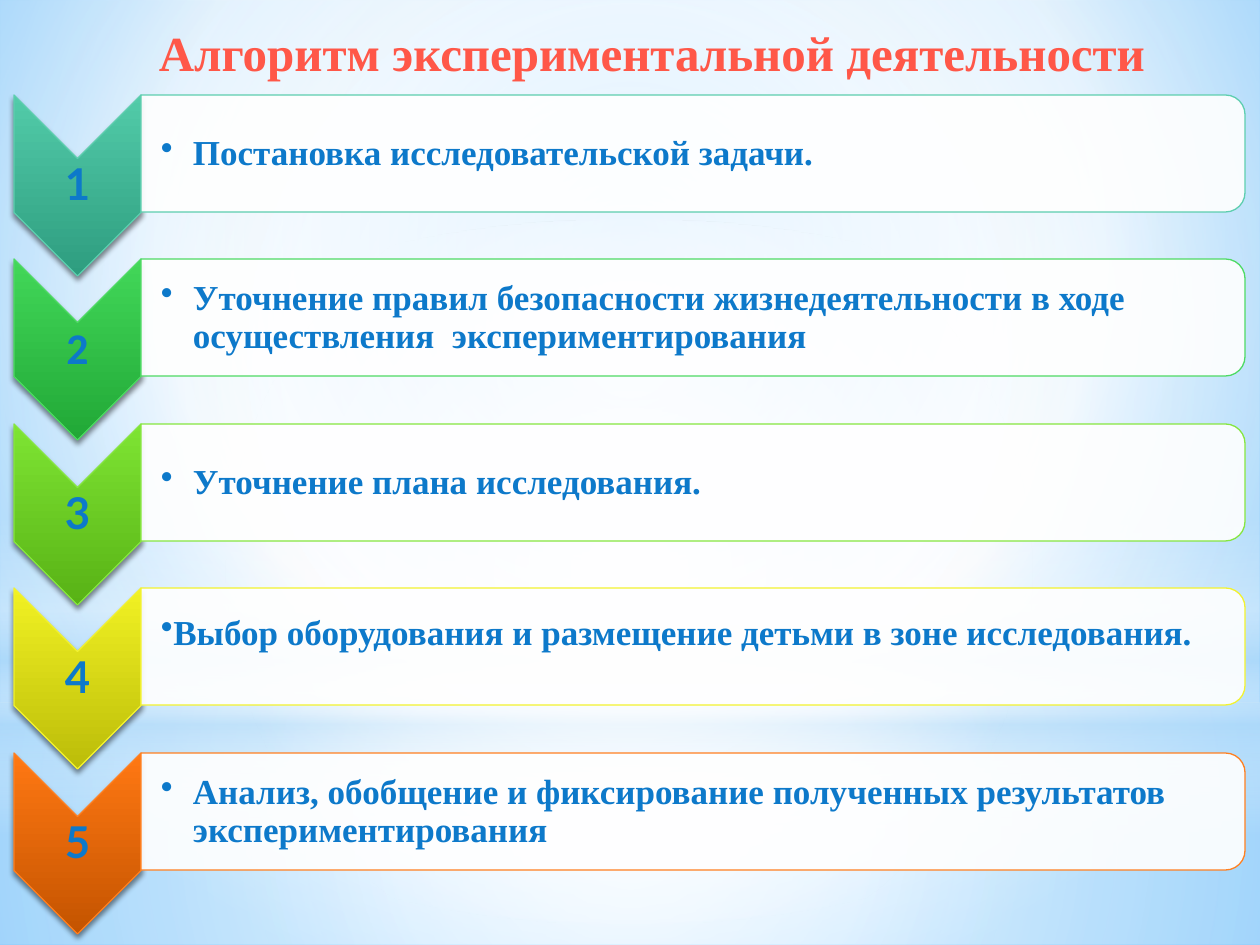
"""Build a slide with the five steps of experimental activity."""
from dataclasses import dataclass
from typing import NamedTuple, Optional

from lxml.etree import SubElement
from pptx import Presentation
from pptx.dml.color import RGBColor
from pptx.enum.shapes import MSO_SHAPE
from pptx.enum.text import MSO_ANCHOR, PP_ALIGN
from pptx.oxml import parse_xml
from pptx.oxml.ns import nsdecls, qn
from pptx.util import Emu, Pt

COLORS = {
    "white": "FFFFFF", "black": "000000", "mist": "B4DCFA",
    "sky": "9ED5FF", "azure": "5BB9FF", "title": "FF5748", "text": "0D79CA",
}
SERIF = "Times New Roman"
ROW_TOP, ROW_PITCH = 95, 164.4


class Box(NamedTuple):
    left: int
    top: int
    width: int
    height: int


class Stop(NamedTuple):
    position: int
    color: str
    opacity: int = 100


@dataclass
class Backdrop:
    kind: MSO_SHAPE
    box: Box
    stops: list[Stop]
    focus: Optional[tuple[int, int, int, int]] = (50, 50, 50, 50)


@dataclass
class Step:
    text: str
    light: str
    dark: str
    line: str
    number_font: str = "Lato"
    indent: int = 32
    spacing: float = 0.9
    bottom_margin: int = 1


WHITE, MIST = COLORS["white"], COLORS["mist"]
BACKDROPS = [
    Backdrop(MSO_SHAPE.RECTANGLE, Box(0, 703, 1260, 242),
             [Stop(0, WHITE, 91), Stop(37, WHITE, 76), Stop(100, MIST, 79)]),
    Backdrop(MSO_SHAPE.RECTANGLE, Box(0, 0, 1260, 703),
             [Stop(0, WHITE, 89), Stop(48, WHITE, 62), Stop(100, MIST, 79)]),
    Backdrop(MSO_SHAPE.RECTANGLE, Box(0, 519, 1260, 315),
             [Stop(0, WHITE, 0), Stop(29, WHITE, 30), Stop(45, MIST, 40),
              Stop(55, WHITE, 26), Stop(65, MIST, 60), Stop(100, WHITE, 0)], None),
    Backdrop(MSO_SHAPE.OVAL, Box(0, 220, 1260, 703), [Stop(0, WHITE), Stop(56, WHITE, 0)]),
]
STEPS = [
    Step("Постановка исследовательской задачи.", "52CBA9", "2E9D7F", "5DCEAF"),
    Step("Уточнение правил безопасности жизнедеятельности в ходе "
         "осуществления  экспериментирования", "42D759", "21A836", "4EDA64", "Calibri"),
    Step("Уточнение плана исследования.", "7EE433", "58B215", "86E640"),
    Step("Выбор оборудования и размещение детьми в зоне исследования.",
         "F1F123", "BCBD09", "F2F230", indent=0, spacing=1.0, bottom_margin=33),
    Step("Анализ, обобщение и фиксирование полученных результатов "
         "экспериментирования", "FF7813", "C45400", "FF8021"),
]


def px(length: float) -> Emu:
    return Emu(round(length * 914400 / 126))


def set_gradient(parent, stops: list[Stop], focus=None) -> None:
    """Replace the solid fill of parent by a gradient, downward unless a focus is given."""
    stop_xml = "".join(
        f'<a:gs pos="{stop.position * 1000}"><a:srgbClr val="{stop.color}">'
        f'<a:alpha val="{stop.opacity * 1000}"/></a:srgbClr></a:gs>' for stop in stops)
    if focus:
        edges = " ".join(f'{side}="{value * 1000}"' for side, value in zip("ltrb", focus))
        direction = f'<a:path path="circle"><a:fillToRect {edges}/></a:path>'
    else:
        direction = '<a:lin ang="5400000" scaled="0"/>'
    gradient = parse_xml(f'<a:gradFill {nsdecls("a")} rotWithShape="0">'
                         f'<a:gsLst>{stop_xml}</a:gsLst>{direction}</a:gradFill>')
    parent.replace(parent.find(qn("a:solidFill")), gradient)


def add_shape(slide, kind: MSO_SHAPE, box: Box, line: Optional[str] = None, turned: bool = False):
    """Add a white shape that covers box, turned a quarter clockwise if asked."""
    left, top, width, height = box
    if turned:
        shift = (width - height) / 2
        left, top, width, height = left + shift, top - shift, height, width
    shape = slide.shapes.add_shape(kind, px(left), px(top), px(width), px(height))
    shape.rotation = 90 if turned else 0
    shape.shadow.inherit = False
    shape.fill.solid()
    shape.fill.fore_color.rgb = RGBColor.from_string(WHITE)
    if line:
        shape.line.color.rgb = RGBColor.from_string(line)
        shape.line.width = Pt(0.75)
    else:
        shape.line.fill.background()
    return shape


def add_text(slide, box: Box, text: str, font: str, size: int, color: str,
             margins: tuple[int, int, int, int], anchor: MSO_ANCHOR = MSO_ANCHOR.MIDDLE):
    """Add a bold one-paragraph text box and return its paragraph."""
    frame = slide.shapes.add_textbox(*map(px, box)).text_frame
    frame.word_wrap = True
    frame.vertical_anchor = anchor
    (frame.margin_left, frame.margin_top,
     frame.margin_right, frame.margin_bottom) = map(px, margins)
    paragraph = frame.paragraphs[0]
    paragraph.text = text
    paragraph.font.name = font
    paragraph.font.size = Pt(size)
    paragraph.font.bold = True
    paragraph.font.color.rgb = RGBColor.from_string(color)
    return paragraph


def set_indent(paragraph, margin: int, first_line: int) -> None:
    properties = paragraph._p.get_or_add_pPr()
    properties.set("marL", str(px(margin)))
    properties.set("indent", str(px(first_line)))


def add_bullet(paragraph) -> None:
    bullet = parse_xml(f'<a:buChar {nsdecls("a")} char="•"/>')
    paragraph._p.get_or_add_pPr().insert_element_before(
        bullet, "a:tabLst", "a:defRPr", "a:extLst")


def add_drop_shadow(shape) -> None:
    effects = shape._element.spPr.find(qn("a:effectLst"))
    shadow = SubElement(effects, qn("a:outerShdw"), blurRad=str(Pt(3.1)),
                        dist=str(Pt(1.8)), dir="5400000", rotWithShape="0")
    color = SubElement(shadow, qn("a:srgbClr"), val=COLORS["black"])
    SubElement(color, qn("a:alpha"), val="45000")


def add_step(slide, number: int, step: Step) -> None:
    """Draw one numbered chevron with its text panel."""
    top = round(ROW_TOP + ROW_PITCH * (number - 1))
    chevron = add_shape(slide, MSO_SHAPE.CHEVRON, Box(14, top, 127, 181), step.line, True)
    set_gradient(chevron._element.spPr, [Stop(0, step.light), Stop(100, step.dark)])
    add_drop_shadow(chevron)
    label = add_text(slide, Box(14, top + 64, 127, 54), str(number), step.number_font, 25,
                     COLORS["text"], (2, 2, 2, 2))
    label.alignment = PP_ALIGN.CENTER
    label.line_spacing = 0.9

    panel = add_shape(slide, MSO_SHAPE.ROUND_2_SAME_RECTANGLE, Box(141, top, 1104, 117),
                      step.line, True)
    color = panel._element.spPr.find(qn("a:solidFill")).find(qn("a:srgbClr"))
    SubElement(color, qn("a:alpha"), val="90000")
    paragraph = add_text(slide, Box(141, top + 6, 1099, 106), step.text, SERIF, 20,
                         COLORS["text"], (20, 1, 1, step.bottom_margin))
    paragraph.line_spacing = step.spacing
    set_indent(paragraph, step.indent, -step.indent)
    add_bullet(paragraph)


def main() -> None:
    presentation = Presentation()
    presentation.slide_width, presentation.slide_height = px(1260), px(945)
    slide = presentation.slides.add_slide(presentation.slide_layouts[6])
    slide.background.fill.solid()
    set_gradient(next(slide._element.iter(qn("p:bgPr"))),
                 [Stop(0, COLORS["sky"]), Stop(60, WHITE), Stop(100, COLORS["azure"])],
                 (20, 10, 20, 60))
    for backdrop in BACKDROPS:
        shape = add_shape(slide, backdrop.kind, backdrop.box)
        set_gradient(shape._element.spPr, backdrop.stops, backdrop.focus)
    for number, step in enumerate(STEPS, start=1):
        add_step(slide, number, step)
    title = add_text(slide, Box(15, 16, 1211, 72), "Алгоритм экспериментальной деятельности",
                     SERIF, 28, COLORS["title"], (13, 6, 13, 6), MSO_ANCHOR.TOP)
    title.alignment = PP_ALIGN.CENTER
    set_indent(title, 63, 0)
    presentation.save("out.pptx")


if __name__ == "__main__":
    main()
